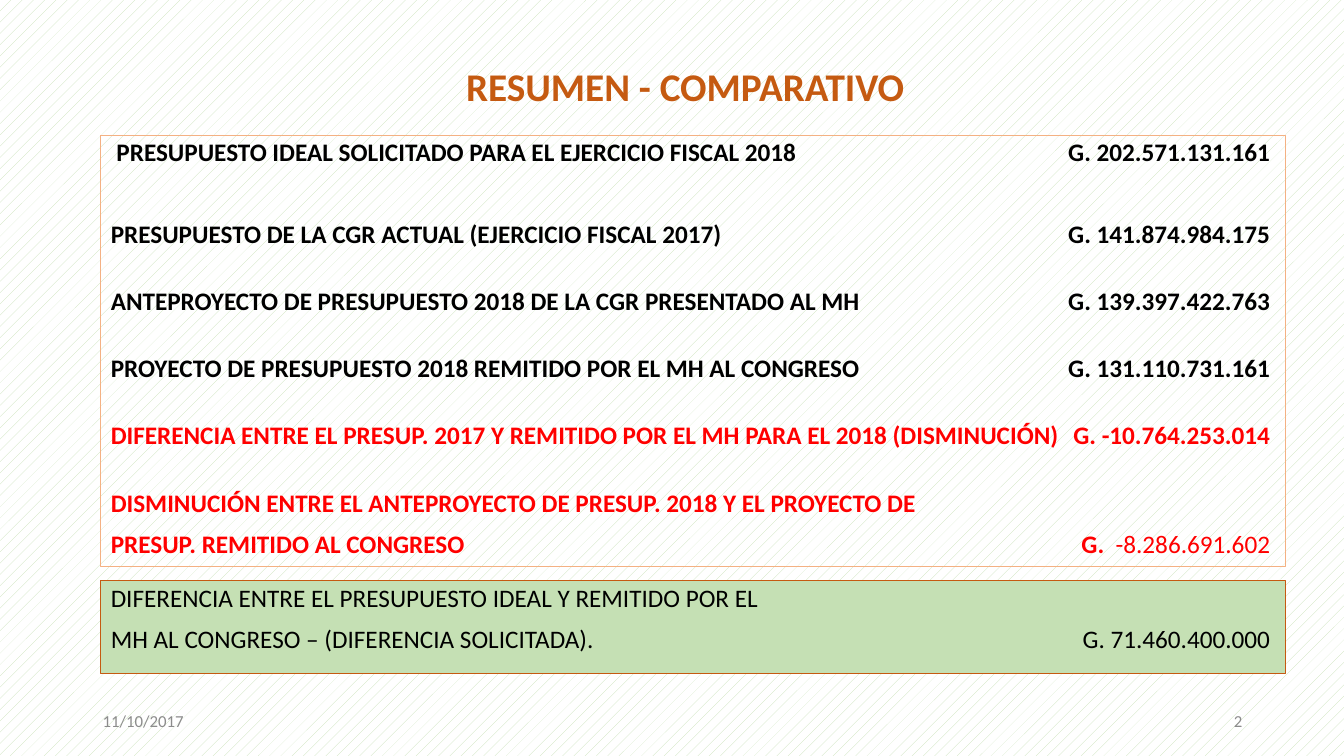
from dataclasses import dataclass

from lxml.etree import SubElement
from pptx import Presentation
from pptx.dml.color import RGBColor
from pptx.enum.dml import MSO_PATTERN
from pptx.enum.shapes import MSO_SHAPE
from pptx.enum.text import MSO_ANCHOR, PP_ALIGN
from pptx.oxml.ns import qn
from pptx.util import Inches, Pt


@dataclass(frozen=True)
class Theme:
    """Colours, font and type sizes of the slide."""
    face: str = "Calibri"
    head: str = "C55A11"
    edge: str = "F4B183"
    green: str = "C5E0B4"
    white: str = "FFFFFF"
    ink: str = "000000"
    red: str = "FF0000"
    gray: str = "8C8C8C"
    big: int = 28
    body: int = 18
    small: int = 12


class Deck:
    """Draws styled elements on the current slide."""

    def __init__(self, theme):
        self.theme = theme
        self.prs = Presentation()
        self.prs.slide_width = Inches(13.33)
        self.prs.slide_height = Inches(7.5)
        self.slide = self.prs.slides.add_slide(self.prs.slide_layouts[6])

    def back(self, fore, back):
        """Fill the background with a dotted pattern."""
        fill = self.slide.background.fill
        fill.patterned()
        fill.pattern = MSO_PATTERN.PERCENT_10
        fill.fore_color.rgb = RGBColor.from_string(fore)
        fill.back_color.rgb = RGBColor.from_string(back)

    def run(self, para, text, color, size, bold=False):
        """Add one formatted run to a paragraph."""
        run = para.add_run()
        run.text = text
        form = {"name": self.theme.face, "size": Pt(size), "bold": bold}
        for key, value in form.items():
            setattr(run.font, key, value)
        run.font.color.rgb = RGBColor.from_string(color)

    def label(self, area, text, color, size, **form):
        """Add a text box with a single line."""
        box = self.slide.shapes.add_textbox(*map(Inches, area))
        frame = box.text_frame
        frame.word_wrap = True
        frame.vertical_anchor = form.get("anchor", MSO_ANCHOR.MIDDLE)
        para = frame.paragraphs[0]
        para.alignment = form.get("align", PP_ALIGN.LEFT)
        para.line_spacing = form.get("line", 1.0)
        self.run(para, text, color, size, form.get("bold", False))

    def panel(self, area, edge, rows, fill=None):
        """Add a framed box of rows, each with its amount at a right tab."""
        box = self.slide.shapes.add_shape(MSO_SHAPE.RECTANGLE, *map(Inches, area))
        box.shadow.inherit = False
        box.line.color.rgb = RGBColor.from_string(edge)
        box.line.width = Pt(0.75)
        if fill:
            box.fill.solid()
            box.fill.fore_color.rgb = RGBColor.from_string(fill)
        else:
            box.fill.background()
        frame = box.text_frame
        frame.word_wrap = True
        frame.vertical_anchor = MSO_ANCHOR.TOP
        for num, (gap, color, runs) in enumerate(rows):
            para = frame.add_paragraph() if num else frame.paragraphs[0]
            tabs = SubElement(para._p.get_or_add_pPr(), qn("a:tabLst"))
            SubElement(tabs, qn("a:tab"), pos=str(Inches(11.5)), algn="r")
            form = {"alignment": PP_ALIGN.LEFT, "line_spacing": 0.9,
                    "space_before": Pt(gap)}
            for key, value in form.items():
                setattr(para, key, value)
            for text, bold in runs:
                self.run(para, text, color, self.theme.body, bold)


def main():
    """Build the budget summary slide."""
    look = Theme()
    deck = Deck(look)
    deck.back(look.green, look.white)
    deck.label((0.92, 0.62, 11.75, 0.6), "RESUMEN - COMPARATIVO", look.head,
               look.big, align=PP_ALIGN.CENTER, anchor=MSO_ANCHOR.TOP,
               line=0.9, bold=True)
    deck.label((0.92, 6.95, 3, 0.4), "11/10/2017", look.gray, look.small)
    deck.label((9.42, 6.95, 3, 0.4), "2", look.gray, look.small,
               align=PP_ALIGN.RIGHT)

    near, far, wide = 10, 28.5, 39
    sums = [
        (0, look.ink, " PRESUPUESTO IDEAL SOLICITADO PARA EL EJERCICIO FISCAL 2018\tG. 202.571.131.161"),
        (wide, look.ink, "PRESUPUESTO DE LA CGR ACTUAL (EJERCICIO FISCAL 2017)\tG. 141.874.984.175"),
        (far, look.ink, "ANTEPROYECTO DE PRESUPUESTO 2018 DE LA CGR PRESENTADO AL MH\tG. 139.397.422.763"),
        (far, look.ink, "PROYECTO DE PRESUPUESTO 2018 REMITIDO POR EL MH AL CONGRESO\tG. 131.110.731.161"),
        (far, look.red, "DIFERENCIA ENTRE EL PRESUP. 2017 Y REMITIDO POR EL MH PARA EL 2018 (DISMINUCIÓN)\tG. -10.764.253.014"),
        (far, look.red, "DISMINUCIÓN ENTRE EL ANTEPROYECTO DE PRESUP. 2018 Y EL PROYECTO DE"),
    ]
    rows = [(gap, color, [(text, True)]) for gap, color, text in sums]
    rows.append((near, look.red, [("PRESUP. REMITIDO AL CONGRESO\tG.  ", True),
                                  ("-8.286.691.602", False)]))
    deck.panel((1, 1.34, 11.75, 4.28), look.edge, rows)

    need = [
        (0, look.ink, [("DIFERENCIA ENTRE EL PRESUPUESTO IDEAL Y REMITIDO POR EL", False)]),
        (near, look.ink, [("MH AL CONGRESO – (DIFERENCIA SOLICITADA).\tG. 71.460.400.000", False)]),
    ]
    deck.panel((1, 5.76, 11.75, 0.92), look.head, need, look.green)
    deck.prs.save("out.pptx")


if __name__ == "__main__":
    main()
